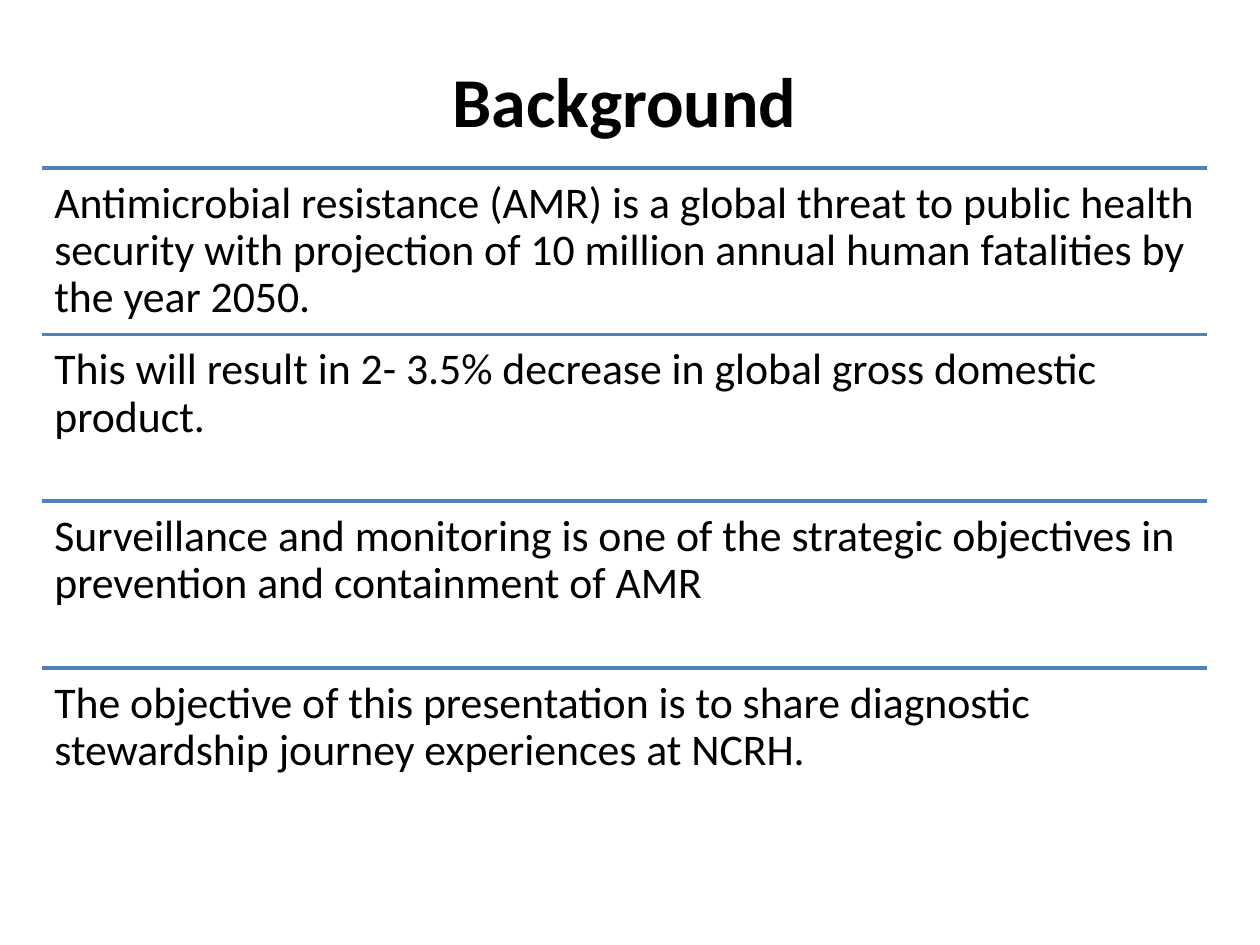
"""Build the Background slide: a title above four ruled statements."""
from lxml import etree
from pptx import Presentation
from pptx.dml.color import RGBColor
from pptx.enum.shapes import MSO_CONNECTOR
from pptx.enum.text import MSO_ANCHOR, PP_ALIGN
from pptx.oxml.ns import qn
from pptx.util import Pt

STRAIGHT = MSO_CONNECTOR.STRAIGHT
TOP, MIDDLE = MSO_ANCHOR.TOP, MSO_ANCHOR.MIDDLE
LEFT, CENTER = PP_ALIGN.LEFT, PP_ALIGN.CENTER

TITLE = "Background"
STATEMENTS = [
    "Antimicrobial resistance (AMR) is a global threat to public health security "
    "with projection of 10 million annual human fatalities by the year 2050.",
    "This will result in 2- 3.5% decrease in global gross domestic product.",
    "Surveillance and monitoring is one of the strategic objectives in prevention "
    "and containment of AMR",
    "The objective of this presentation is to share diagnostic stewardship journey "
    "experiences at NCRH.",
]

THEME = {
    "font": "Calibri",
    "background": RGBColor(0xFF, 0xFF, 0xFF),
    "text": RGBColor(0x00, 0x00, 0x00),
    "rule": RGBColor(0x4F, 0x81, 0xBD),
    "title_size": 40,
    "body_size": 25,
    "rule_width": 2,
}

SLIDE_WIDTH, SLIDE_HEIGHT = 720, 540
TITLE_BOX = (30, 12, 654, 90)
LIST_LEFT, LIST_TOP, LIST_WIDTH = 24, 96, 666
ROW_HEIGHT = 95.2


def add_text(slide, text, box, size, bold=False, align=LEFT, anchor=TOP,
             inset=7.2, line_spacing=1.0):
    frame = slide.shapes.add_textbox(*map(Pt, box)).text_frame
    frame.word_wrap = True
    frame.vertical_anchor = anchor
    frame.margin_left = frame.margin_right = Pt(7.2)
    frame.margin_top = frame.margin_bottom = Pt(inset)
    paragraph = frame.paragraphs[0]
    paragraph.alignment = align
    paragraph.line_spacing = line_spacing
    run = paragraph.add_run()
    run.text = text
    run.font.name = THEME["font"]
    run.font.size = Pt(size)
    run.font.bold = bold
    run.font.color.rgb = THEME["text"]


def add_rule(slide, left, top, width):
    rule = slide.shapes.add_connector(
        STRAIGHT, Pt(left), Pt(top), Pt(left + width), Pt(top))
    rule.line.color.rgb = THEME["rule"]
    rule.line.width = Pt(THEME["rule_width"])
    etree.SubElement(rule._element.spPr, qn("a:effectLst"))


def main():
    deck = Presentation()
    deck.slide_width, deck.slide_height = Pt(SLIDE_WIDTH), Pt(SLIDE_HEIGHT)
    slide = deck.slides.add_slide(deck.slide_layouts[6])
    slide.background.fill.solid()
    slide.background.fill.fore_color.rgb = THEME["background"]

    add_text(slide, TITLE, TITLE_BOX, THEME["title_size"], bold=True,
             align=CENTER, anchor=MIDDLE, inset=3.6)
    for row, statement in enumerate(STATEMENTS):
        top = LIST_TOP + row * ROW_HEIGHT
        add_rule(slide, LIST_LEFT, top, LIST_WIDTH)
        add_text(slide, statement, (LIST_LEFT, top, LIST_WIDTH, ROW_HEIGHT),
                 THEME["body_size"], line_spacing=0.9)

    deck.save("out.pptx")


if __name__ == "__main__":
    main()
